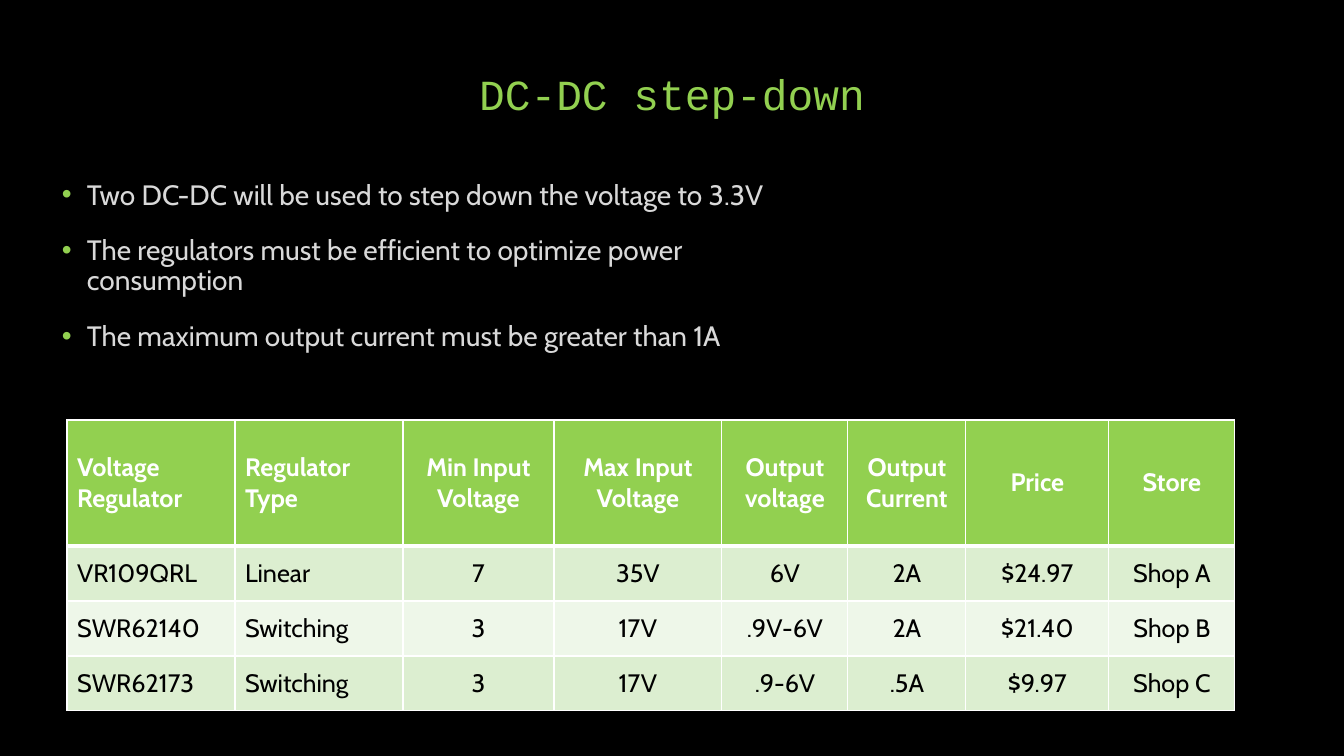
from lxml.etree import SubElement
from pptx import Presentation
from pptx.dml.color import RGBColor
from pptx.enum.text import MSO_ANCHOR as Anchor, PP_ALIGN as Align
from pptx.oxml.ns import qn
from pptx.util import Pt

SCALE = 914400 / 100.8
GREEN, WHITE, BLACK, GREY = "92D050", "FFFFFF", "000000", "D9D9D9"
BAND_FILLS = ["DCEED0", "EEF7E9"]

BULLETS = [
    "Two DC-DC will be used to step down the voltage to 3.3V",
    "The regulators must be efficient to optimize power consumption",
    "The maximum output current must be greater than 1A",
]
COLUMN_WIDTHS = [168, 168, 151, 168, 126, 118, 143, 126]
HEADER_HEIGHT, ROW_HEIGHT = 126, 55
REGULATORS = [
    ["Voltage Regulator", "Regulator Type", "Min Input Voltage", "Max Input Voltage",
     "Output voltage", "Output Current", "Price", "Store"],
    ["VR109QRL", "Linear", "7", "35V", "6V", "2A", "$24.97", "Shop A"],
    ["SWR62140", "Switching", "3", "17V", ".9V-6V", "2A", "$21.40", "Shop B"],
    ["SWR62173", "Switching", "3", "17V", ".9-6V", ".5A", "$9.97", "Shop C"],
]


def px(length):
    """Turn pixels into EMU."""
    return round(length * SCALE)


def color(value):
    """Turn a hex string into a colour."""
    return RGBColor.from_string(value)


def write(paragraph, text, size=18, font="Cabin", ink=BLACK, bold=False,
          align=Align.LEFT, line_spacing=None, space_before=None):
    """Put formatted text into a paragraph."""
    run = paragraph.add_run()
    run.text = text
    run.font.size = Pt(size)
    run.font.name = font
    run.font.bold = bold
    run.font.color.rgb = color(ink)
    paragraph.alignment = align
    if line_spacing:
        paragraph.line_spacing = line_spacing
    if space_before:
        paragraph.space_before = Pt(space_before)


def add_bullet(paragraph, indent):
    """Give a paragraph a green bullet with a hanging indent."""
    properties = paragraph._p.get_or_add_pPr()
    properties.set("marL", str(px(indent)))
    properties.set("indent", str(-px(indent)))
    bullet_color = SubElement(properties, qn("a:buClr"))
    SubElement(bullet_color, qn("a:srgbClr"), val=GREEN)
    SubElement(properties, qn("a:buFont"), typeface="Arial")
    SubElement(properties, qn("a:buChar"), char="•")


def add_borders(cell, top, bottom):
    """Draw white cell borders with the given top and bottom widths."""
    properties = cell._tc.get_or_add_tcPr()
    for side, width in {"L": 1, "R": 1, "T": top, "B": bottom}.items():
        line = SubElement(properties, qn(f"a:ln{side}"), w=str(Pt(width)))
        fill = SubElement(line, qn("a:solidFill"))
        SubElement(fill, qn("a:srgbClr"), val=WHITE)


def add_frame(slide, left, top, width, height):
    """Add a wrapping text box and return its text frame."""
    shape = slide.shapes.add_textbox(px(left), px(top), px(width), px(height))
    shape.text_frame.word_wrap = True
    return shape.text_frame


def add_title(slide, left, top, width, height):
    """Add the centred slide title."""
    frame = add_frame(slide, left, top, width, height)
    frame.vertical_anchor = Anchor.BOTTOM
    frame.margin_bottom = px(56)
    write(frame.paragraphs[0], "DC-DC step-down", size=30.6, font="Courier New",
          ink=GREEN, align=Align.CENTER, line_spacing=0.9)


def add_requirements(slide, left, top, width, height):
    """Add the bulleted requirements."""
    frame = add_frame(slide, left, top, width, height)
    for index, text in enumerate(BULLETS):
        paragraph = frame.add_paragraph() if index else frame.paragraphs[0]
        write(paragraph, text, size=20, ink=GREY, line_spacing=0.9, space_before=18)
        add_bullet(paragraph, 25)


def add_regulator_table(slide, left, top):
    """Add the table that compares the regulators."""
    row_heights = [HEADER_HEIGHT] + [ROW_HEIGHT] * (len(REGULATORS) - 1)
    table = slide.shapes.add_table(
        len(row_heights), len(COLUMN_WIDTHS), px(left), px(top),
        px(sum(COLUMN_WIDTHS)), px(sum(row_heights))).table
    table.first_row = table.horz_banding = False
    for column, width in zip(table.columns, COLUMN_WIDTHS):
        column.width = px(width)
    for row_index, values in enumerate(REGULATORS):
        table.rows[row_index].height = px(row_heights[row_index])
        header = row_index == 0
        fill = GREEN if header else BAND_FILLS[(row_index - 1) % 2]
        for column_index, text in enumerate(values):
            cell = table.cell(row_index, column_index)
            cell.vertical_anchor = Anchor.MIDDLE
            add_borders(cell, top=3 if row_index == 1 else 1, bottom=3 if header else 1)
            cell.fill.solid()
            cell.fill.fore_color.rgb = color(fill)
            write(cell.text_frame.paragraphs[0], text, bold=header,
                  ink=WHITE if header else BLACK,
                  align=Align.LEFT if column_index < 2 else Align.CENTER)


def main():
    """Build and save the slide."""
    presentation = Presentation()
    presentation.slide_width, presentation.slide_height = px(1344), px(756)
    slide = presentation.slides.add_slide(presentation.slide_layouts[6])
    slide.background.fill.solid()
    slide.background.fill.fore_color.rgb = color(BLACK)
    add_title(slide, 168, 50, 1008, 126)
    add_regulator_table(slide, 67, 420)
    add_requirements(slide, 52, 176, 773, 471)
    presentation.save("out.pptx")


if __name__ == "__main__":
    main()
